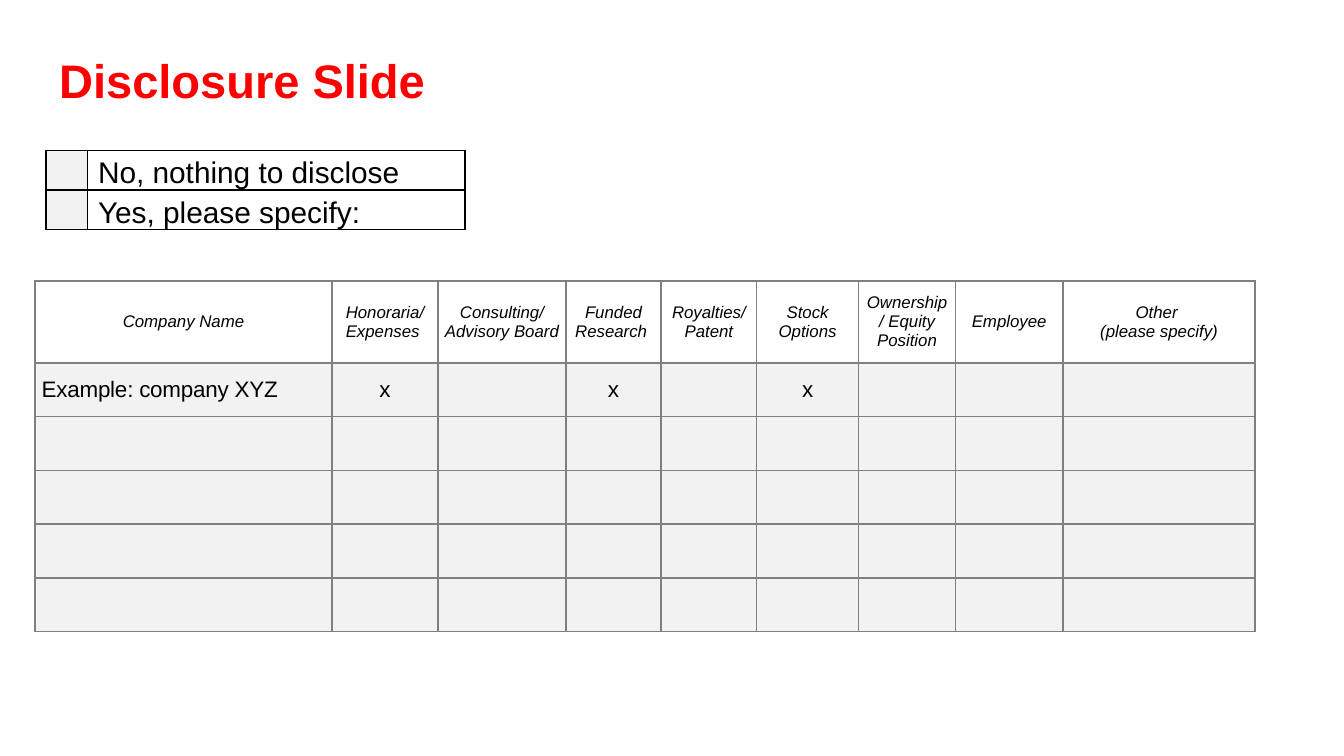
"""Build a disclosure slide with an answer box and a table of company interests."""
import pptx
import pptx.dml.color
import pptx.enum.text
import pptx.oxml
import pptx.oxml.ns
import pptx.util

Inches = pptx.util.Inches
Pt = pptx.util.Pt
RED = pptx.dml.color.RGBColor(0xFF, 0x00, 0x00)
BLACK = pptx.dml.color.RGBColor(0x00, 0x00, 0x00)
GRAY = pptx.dml.color.RGBColor(0x80, 0x80, 0x80)
PALE = pptx.dml.color.RGBColor(0xF2, 0xF2, 0xF2)
LEFT = pptx.enum.text.PP_ALIGN.LEFT
CENTER = pptx.enum.text.PP_ALIGN.CENTER
TOP = pptx.enum.text.MSO_ANCHOR.TOP
MIDDLE = pptx.enum.text.MSO_ANCHOR.MIDDLE


def add_grid(left, top, widths, heights):
    table = s.shapes.add_table(len(heights), len(widths), Inches(left), Inches(top),
                               Inches(sum(widths)), Inches(sum(heights))).table
    table.first_row = table.horz_banding = False
    for col, width in zip(table.columns, widths):
        col.width = Inches(width)
    for row, height in zip(table.rows, heights):
        row.height = Inches(height)
    return table


def format_cell(cell, text, size, line, shaded, margins, anchor, align=LEFT, italic=False):
    tcPr = cell._tc.get_or_add_tcPr()
    for side in ("lnL", "lnR", "lnT", "lnB"):
        tcPr.append(pptx.oxml.parse_xml(
            f'<a:{side} {pptx.oxml.ns.nsdecls("a")} w="{Pt(1)}"><a:solidFill>'
            f'<a:srgbClr val="{line}"/></a:solidFill></a:{side}>'))
    if shaded:
        cell.fill.solid()
        cell.fill.fore_color.rgb = PALE
    else:
        cell.fill.background()
    side, above = margins
    cell.margin_left = cell.margin_right = Inches(side)
    cell.margin_top, cell.margin_bottom = Inches(above), 0
    cell.vertical_anchor = anchor
    cell.text = text
    for p in cell.text_frame.paragraphs:
        p.alignment = align
        p.font.name = "Arial"
        p.font.size = Pt(size)
        p.font.italic = italic
        p.font.color.rgb = BLACK


prs = pptx.Presentation()
prs.slide_width = Inches(10)
prs.slide_height = Inches(10 * 9 / 16)
s = prs.slides.add_slide(prs.slide_layouts[5])

title = s.shapes.title
title.left, title.top = Inches(0.34), Inches(0.28)
title.width, title.height = Inches(5.67), Inches(0.63)
tf = title.text_frame
tf.text = "Disclosure Slide"
tf.vertical_anchor = MIDDLE
tf.margin_left = tf.margin_right = tf.margin_top = tf.margin_bottom = Inches(0.1)
p = tf.paragraphs[0]
p.alignment = LEFT
p.font.name = "Arial"
p.font.size = Pt(25.2)
p.font.bold = True
p.font.color.rgb = RED

headers = ["Company Name", "Honoraria/\nExpenses ", "Consulting/ Advisory Board",
           "Funded Research ", "Royalties/ Patent", "Stock Options",
           "Ownership/ Equity Position", "Employee", "Other \n(please specify)"]
example = ["Example: company XYZ\u00a0", "x", "", "x", "", "x", "", "", ""]
rows = [headers, example] + [[""] * len(headers)] * 4
interests = add_grid(0.26, 2.09, [2.21, 0.79, 0.95, 0.71, 0.71, 0.76, 0.72, 0.8, 1.43],
                     [0.61] + [0.4] * 5)
for i, row in enumerate(rows):
    for j, text in enumerate(row):
        header = i == 0
        format_cell(interests.cell(i, j), text, 9 if header else 12, GRAY, not header,
                    (0.05, 0), MIDDLE, CENTER if header or j else LEFT, header)
interests.cell(1, 0).text_frame.paragraphs[0].runs[0].font._element.set("spc", "-10")

answers = add_grid(0.34, 1.12, [0.31, 2.81], [0.29, 0.29])
for i, answer in enumerate(["No, nothing to disclose", "Yes, please specify:"]):
    format_cell(answers.cell(i, 0), "", 12, BLACK, True, (0.08, 0.01), TOP)
    format_cell(answers.cell(i, 1), answer, 16, BLACK, False, (0.08, 0.01), TOP)
    answers.cell(i, 1).text_frame.paragraphs[0].line_spacing = 1.15

prs.save("out.pptx")
